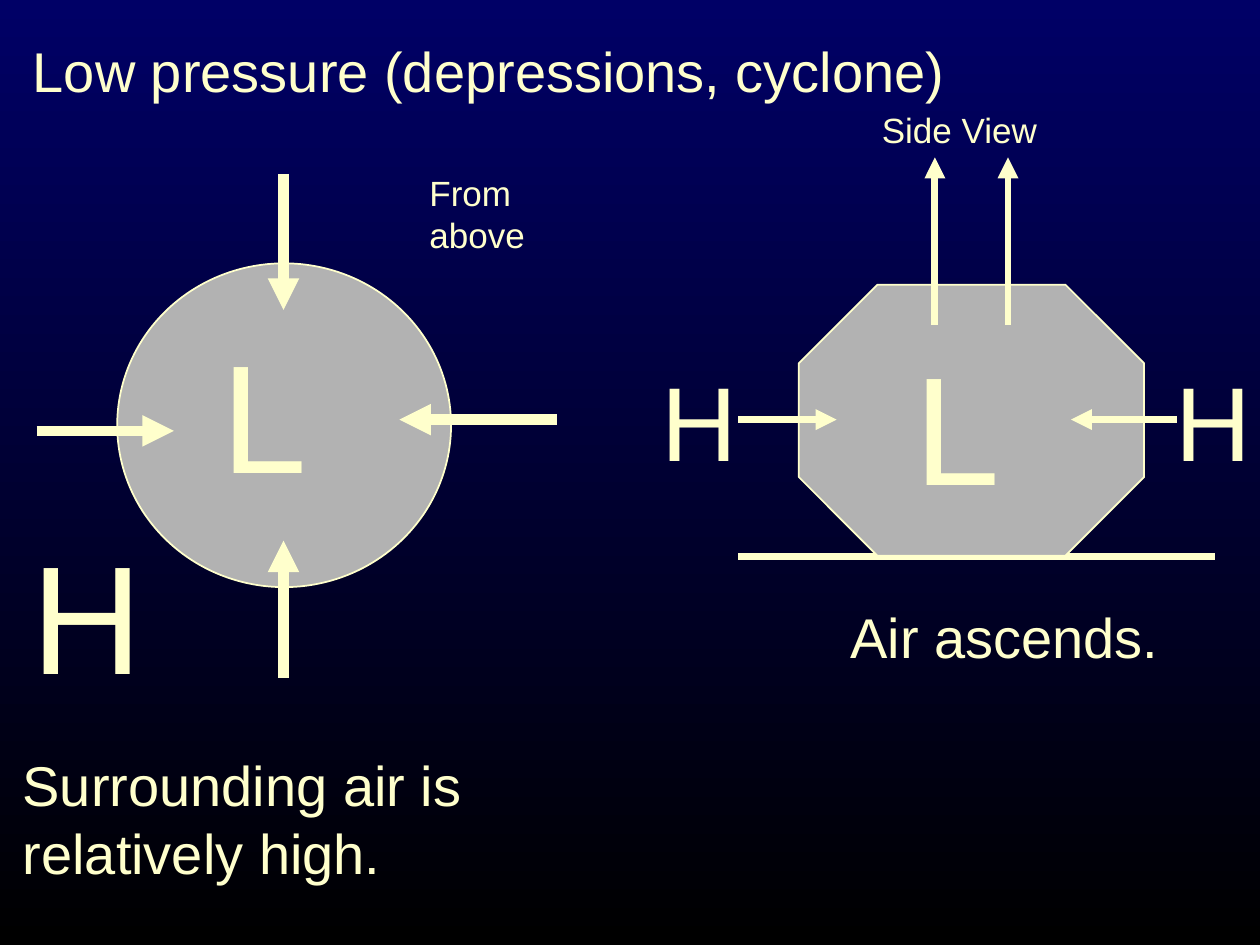
from lxml.etree import SubElement as Sub
from pptx import Presentation
from pptx.dml.color import RGBColor
from pptx.enum.shapes import MSO_CONNECTOR as Link, MSO_SHAPE as Form
from pptx.enum.text import MSO_ANCHOR as Anchor, MSO_AUTO_SIZE as Auto, PP_ALIGN as Align
from pptx.oxml.ns import qn
from pptx.util import Inches, Pt

COLS, ROWS = 100, 75


def hue(code):
    return RGBColor.from_string(code)


class Chart:
    font = "Arial"
    ink = "FFFFCC"
    mass = "B2B2B2"
    sky = ("000066", "000000")

    def __init__(self, deck):
        self.wide, self.high = deck.slide_width, deck.slide_height
        self.slide = deck.slides.add_slide(deck.slide_layouts[1])
        fill = self.slide.background.fill
        fill.gradient()
        fill.gradient_angle = 270
        for stop, code in zip(fill.gradient_stops, self.sky):
            stop.color.rgb = hue(code)

    def spot(self, col, row):
        return round(self.wide * col / COLS), round(self.high * row / ROWS)

    def box(self, col, row, cols, rows):
        return *self.spot(col, row), *self.spot(cols, rows)

    def style(self, shape, text, size, wrap=True):
        frame = shape.text_frame
        frame.text = text
        frame.word_wrap = wrap
        frame.auto_size = Auto.NONE
        frame.vertical_anchor = Anchor.TOP
        para = frame.paragraphs[0]
        para.alignment = Align.LEFT
        para.space_before = Pt(0)
        for run in para.runs:
            run.font.name = self.font
            run.font.size = Pt(size)
            run.font.color.rgb = hue(self.ink)
        return para

    def hold(self, index, text, place, size=32):
        shape = self.slide.placeholders[index]
        shape.left, shape.top, shape.width, shape.height = self.box(*place)
        props = self.style(shape, text, size)._p.get_or_add_pPr()
        props.set("marL", "0")
        props.set("indent", "0")
        Sub(props, qn("a:buNone"))

    def label(self, text, place, size, wrap=True):
        shape = self.slide.shapes.add_textbox(*self.box(*place))
        self.style(shape, text, size, wrap)

    def cell(self, form, place, bend=None):
        shape = self.slide.shapes.add_shape(form, *self.box(*place))
        shape.shadow.inherit = False
        shape.fill.solid()
        shape.fill.fore_color.rgb = hue(self.mass)
        shape.line.color.rgb = hue(self.ink)
        shape.line.width = Pt(1)
        if bend:
            shape.adjustments[0] = bend

    def line(self, start, end, width, tip=True):
        link = self.slide.shapes.add_connector(
            Link.STRAIGHT, *self.spot(*start), *self.spot(*end))
        link.line.color.rgb = hue(self.ink)
        link.line.width = Pt(width)
        if tip:
            Sub(link.line._ln, qn("a:tailEnd"), type="triangle")
        Sub(link._element.spPr, qn("a:effectLst"))


def main():
    deck = Presentation()
    deck.slide_width, deck.slide_height = Inches(10), Inches(7.5)
    chart = Chart(deck)

    chart.hold(0, "Low pressure (depressions, cyclone)", (1.6, 2.4, 95.9, 6.3))
    chart.hold(1, "Surrounding air is relatively high.", (0.8, 59.1, 38.4, 15))

    chart.cell(Form.OVAL, (9.3, 20.9, 26.5, 25.7))
    chart.label("From above", (33.1, 13.1, 16, 7.4), 20)
    chart.label("L", (16.6, 24.9, 14.3, 15.6), 88)
    chart.label("H", (1.5, 40.8, 10.8, 15.6), 88, False)
    for start, end in (
        ((44.2, 33.3), (31.7, 33.3)),
        ((2.9, 34.2), (13.8, 34.2)),
        ((22.5, 13.8), (22.5, 24.6)),
        ((22.5, 53.8), (22.5, 42.9)),
    ):
        chart.line(start, end, 6)

    chart.line((58.6, 44.2), (96.4, 44.2), 4, False)
    chart.cell(Form.OCTAGON, (63.4, 22.6, 27.4, 21.5), 0.29)
    chart.label("Side View", (69, 8.1, 14.4, 4.3), 20, False)
    chart.label("L", (71.6, 25.8, 10.9, 15.6), 88)
    for col in (51.5, 92.3):
        chart.label("H", (col, 27.8, 8, 11), 60, False)
    for start, end in (((58.6, 33.3), (66.4, 33.3)), ((93.4, 33.3), (85, 33.3))):
        chart.line(start, end, 4)
    for col in (74.2, 80):
        chart.line((col, 25.8), (col, 12.5), 4)
    chart.label("Air ascends.", (66.5, 47.3, 31.9, 6.4), 32)

    deck.save("out.pptx")


if __name__ == "__main__":
    main()
